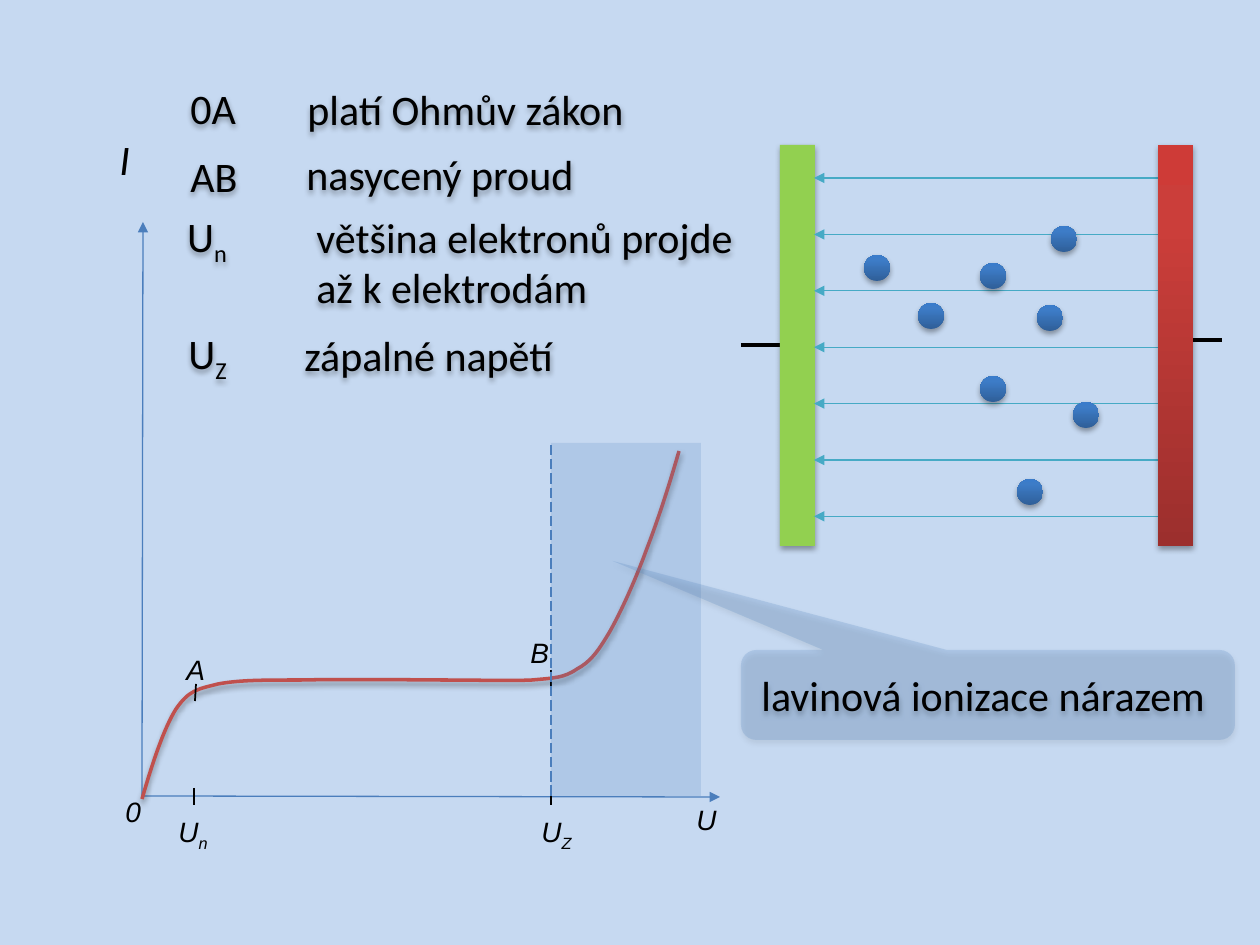
from lxml import etree
from pptx import Presentation
from pptx.dml.color import RGBColor
from pptx.enum.dml import MSO_LINE
from pptx.enum.shapes import MSO_CONNECTOR, MSO_SHAPE
from pptx.enum.text import MSO_ANCHOR, MSO_AUTO_SIZE, PP_ALIGN
from pptx.oxml.ns import qn
from pptx.util import Pt

PX = 914400 / 126
DASH = MSO_LINE.LONG_DASH
STRAIGHT = MSO_CONNECTOR.STRAIGHT
RECT, OVAL = MSO_SHAPE.RECTANGLE, MSO_SHAPE.OVAL
CALLOUT = MSO_SHAPE.ROUNDED_RECTANGULAR_CALLOUT
FIT, MIDDLE = MSO_AUTO_SIZE.SHAPE_TO_FIT_TEXT, MSO_ANCHOR.MIDDLE
LEFT, CENTER = PP_ALIGN.LEFT, PP_ALIGN.CENTER

SKY = RGBColor(0xC6, 0xD9, 0xF1)
BLACK = RGBColor(0, 0, 0)
AXIS = RGBColor(0x4B, 0x7E, 0xBC)
BLUE = RGBColor(0x4F, 0x81, 0xBD)
TEAL = RGBColor(0x46, 0xAA, 0xC5)
BRICK = RGBColor(0xC0, 0x50, 0x4D)
GREEN = RGBColor(0x92, 0xD0, 0x50)
RED_FADE = [(0, "9C2F2D"), (80, "CB3E3A"), (100, "CE3B37")]
BLUE_FADE = [(0, "2F5F99"), (80, "3D7CC7"), (100, "3A7CCB")]

# start, end
AXES = [((142, 798), (143, 222)), ((143, 796), (720, 797))]
TICKS = [((196, 684), (195, 701)), ((551, 670), (551, 688)),
         ((194, 788), (194, 805)), ((551, 788), (551, 805))]
LEADS = [((741, 345), (780, 345)), ((1182, 340), (1222, 340))]

# text, subscript, box
GRAPH = [("0", "", (113, 788, 42, 47)), ("U", "", (684, 796, 45, 47)),
         ("U", "n", (166, 808, 57, 47)), ("U", "Z", (529, 808, 57, 47)),
         ("A", "", (174, 646, 44, 47)), ("B", "", (518, 629, 44, 47))]
CURRENT = ("I", "", (107, 127, 37, 63))
# text, subscript, box, wrap, alignment
NOTES = [("0A", "", (178, 76, 72, 63), False, LEFT),
         ("platí Ohmův zákon", "", (295, 77, 345, 63), False, LEFT),
         ("AB", "", (178, 144, 73, 63), False, LEFT),
         ("nasycený proud", "", (294, 142, 295, 63), False, LEFT),
         ("U", "n", (164, 204, 86, 63), True, CENTER),
         ("většina elektronů projde \važ k elektrodám", "",
          (304, 205, 489, 115), True, LEFT),
         ("U", "Z", (176, 321, 66, 63), False, LEFT),
         ("zápalné napětí", "", (292, 323, 277, 63), False, LEFT)]

# start point, then two handles and an end point for each Bézier piece
CURVE = [(142, 799), (152, 764), (164, 728), (176, 709),
         (189, 690), (198, 689), (218, 684), (239, 680), (263, 680), (301, 680),
         (338, 679), (442, 680), (442, 680), (480, 680), (509, 681), (532, 680),
         (554, 678), (564, 678), (577, 669), (590, 662), (597, 653), (609, 633),
         (620, 614), (635, 581), (646, 551), (658, 520), (669, 486), (679, 451)]
BALLS = [(864, 255), (980, 376), (918, 303), (980, 263),
         (1051, 226), (1073, 402), (1037, 305), (1017, 479)]
BALL = 26
FIELD_TOP, FIELD_GAP, FIELD_COUNT = 178, 56.4, 7


def emu(vals):
    return [round(v * PX) for v in vals]


def sub(parent, tag, **attrs):
    """Append a DrawingML child element."""
    node = etree.SubElement(parent, qn("a:" + tag))
    for key, val in attrs.items():
        node.set(key, str(val))
    return node


def shade(shape, alpha=35, dist=23000):
    shape.shadow.inherit = False
    glow = shape._element.spPr.find(qn("a:effectLst"))
    drop = sub(glow, "outerShdw", blurRad=40000, dist=dist, dir=5400000, rotWithShape=0)
    sub(sub(drop, "srgbClr", val="000000"), "alpha", val=alpha * 1000)


def draw_line(ends, color, width, arrow=False, dash=None):
    (x1, y1), (x2, y2) = ends
    link = shapes.add_connector(STRAIGHT, *emu((x1, y1, x2, y2)))
    link.line.color.rgb = color
    link.line.width = Pt(width)
    if dash:
        link.line.dash_style = dash
    if arrow:
        sub(link.line._get_or_add_ln(), "tailEnd", type="triangle")
    sub(link._element.spPr, "effectLst")


def draw_shape(kind, box, fill, alpha=None, shadow=True):
    """Fill is a plain colour or a list of gradient stops."""
    shape = shapes.add_shape(kind, *emu(box))
    shape.line.fill.background()
    if isinstance(fill, list):
        shape.fill.gradient()
        shape.fill.gradient_angle = 90
        stops = shape._element.spPr.find(".//" + qn("a:gsLst"))
        for old in list(stops):
            stops.remove(old)
        for pos, color in fill:
            sub(sub(stops, "gs", pos=pos * 1000), "srgbClr", val=color)
    else:
        shape.fill.solid()
        shape.fill.fore_color.rgb = fill
        if alpha:
            tint = shape._element.spPr.find(".//" + qn("a:srgbClr"))
            sub(tint, "alpha", val=alpha * 1000)
    shape.shadow.inherit = False
    if shadow:
        shade(shape)
    return shape


def write(frame, text, low="", size=24, face="Calibri", italic=False, align=LEFT):
    para = frame.paragraphs[0]
    para.text = text
    para.alignment = align
    if low:
        run = para.add_run()
        run.text = low
        run._r.get_or_add_rPr().set("baseline", "-25000")
    look = {"size": Pt(size), "name": face, "italic": italic}
    for run in para.runs:
        for key, val in look.items():
            setattr(run.font, key, val)
        run.font.color.rgb = BLACK


def draw_text(text, low, box, wrap=False, align=LEFT, shadow=False, **look):
    label = shapes.add_textbox(*emu(box))
    label.text_frame.word_wrap = wrap
    label.text_frame.auto_size = FIT
    write(label.text_frame, text, low, align=align, **look)
    if shadow:
        shade(label)


def draw_curve(points):
    first, *rest = points
    pen = shapes.build_freeform(*first, scale=PX)
    pen.add_line_segments(rest, close=False)
    curve = pen.convert_to_shape()
    track = curve._element.spPr.find(".//" + qn("a:path"))
    lines = track.findall(qn("a:lnTo"))
    for i in range(0, len(lines), 3):
        bend = sub(track, "cubicBezTo")
        for line in lines[i:i + 3]:
            bend.append(line[0])
            track.remove(line)
    curve.fill.background()
    curve.line.color.rgb = BRICK
    curve.line.width = Pt(2)
    shade(curve, 38, 20000)


deck = Presentation()
deck.slide_width, deck.slide_height = emu((1260, 945))
slide = deck.slides.add_slide(deck.slide_layouts[6])
slide.background.fill.solid()
slide.background.fill.fore_color.rgb = SKY
shapes = slide.shapes

for ends in AXES:
    draw_line(ends, AXIS, 0.75, arrow=True)
draw_curve(CURVE)
for ends in TICKS:
    draw_line(ends, BLACK, 1)
for label in GRAPH:
    draw_text(*label, size=16, face="Arial", italic=True)
draw_text(*CURRENT, italic=True)
for note in NOTES:
    draw_text(*note, shadow=True)
draw_line(((551, 445), (551, 797)), AXIS, 0.75, dash=DASH)
draw_shape(RECT, (551, 443, 150, 353), BLUE, 19, shadow=False)

for ends in LEADS:
    draw_line(ends, BLACK, 2.25)
draw_shape(RECT, (780, 145, 35, 401), GREEN)
for i in range(FIELD_COUNT):
    y = FIELD_TOP + i * FIELD_GAP
    draw_line(((1166, y), (814, y)), TEAL, 0.75, arrow=True)
draw_shape(RECT, (1158, 145, 35, 401), RED_FADE)

bubble = draw_shape(CALLOUT, (741, 650, 494, 90), BLUE, 21)
for i, val in enumerate((-0.76, -1.49, 0.17)):
    bubble.adjustments[i] = val
bubble.text_frame.vertical_anchor = MIDDLE
bubble.text_frame.word_wrap = True
write(bubble.text_frame, "lavinová ionizace nárazem ", align=CENTER)
for spot in BALLS:
    draw_shape(OVAL, (*spot, BALL, BALL), BLUE_FADE)

deck.save("out.pptx")
